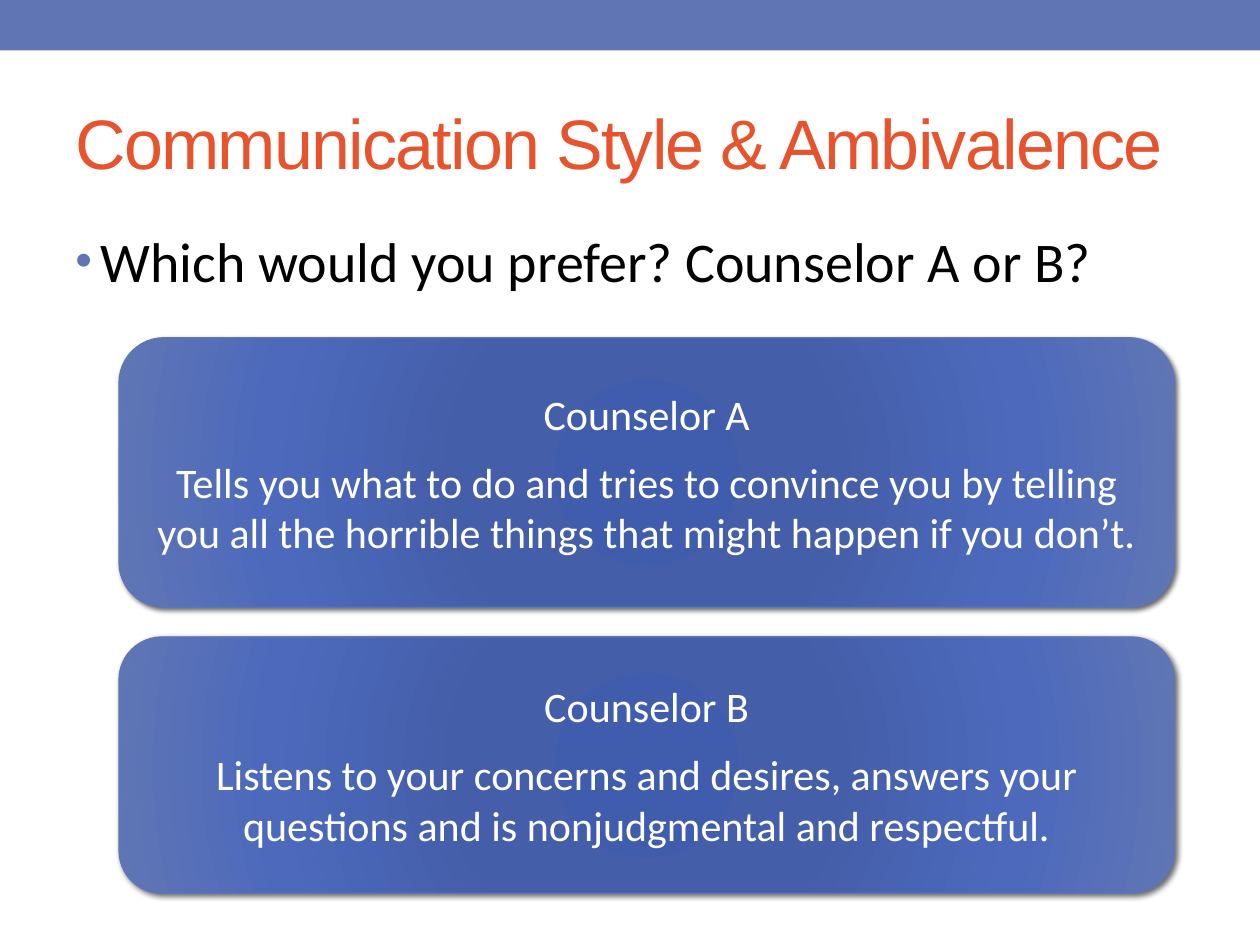
import pptx
import pptx.dml.color
import pptx.enum.shapes
import pptx.enum.text
import pptx.oxml
import pptx.oxml.ns
import pptx.util
from enum import Enum

Pt = pptx.util.Pt
RGBColor = pptx.dml.color.RGBColor
Align = pptx.enum.text.PP_ALIGN
Anchor = pptx.enum.text.MSO_ANCHOR
Shape = pptx.enum.shapes.MSO_SHAPE


class Theme(Enum):
    BLUE = "6076B4"
    ORANGE = "E6532C"
    BLACK = "000000"
    WHITE = "FFFFFF"
    TITLE_SIZE = 40
    QUESTION_SIZE = 32
    CARD_SIZE = 24


NAMESPACE = pptx.oxml.ns.nsdecls("a")
GRADIENT_STOPS = [(0, "405CAC"), (34, "445EA9"), (70, "4C69BC"), (100, "6076B4")]
GRADIENT = (
    f'<a:gradFill {NAMESPACE} rotWithShape="1"><a:gsLst>'
    + "".join(
        f'<a:gs pos="{position * 1000}"><a:srgbClr val="{color}"/></a:gs>'
        for position, color in GRADIENT_STOPS
    )
    + '</a:gsLst><a:path path="circle">'
    '<a:fillToRect l="100000" t="100000" r="100000" b="100000"/></a:path></a:gradFill>'
)
SHADOW = (
    f'<a:effectLst {NAMESPACE}><a:outerShdw blurRad="{Pt(3)}" dist="{Pt(2)}" dir="2700000" '
    'rotWithShape="0"><a:srgbClr val="000000"><a:alpha val="60000"/></a:srgbClr>'
    "</a:outerShdw></a:effectLst>"
)
BULLET = (
    f'<a:buClr {NAMESPACE}><a:srgbClr val="{Theme.BLUE.value}"/></a:buClr>',
    f'<a:buSzPct {NAMESPACE} val="85000"/>',
    f'<a:buFont {NAMESPACE} typeface="Arial"/>',
    f'<a:buChar {NAMESPACE} char="•"/>',
)


def write_text(shape, lines, *, size, color, font="Calibri", align=Align.LEFT,
               anchor=Anchor.TOP, before=0, after=0, tracking=None, indent=0):
    """Fill the shape with one paragraph per line; a nonzero indent adds a bullet."""
    frame = shape.text_frame
    frame.word_wrap = True
    frame.vertical_anchor = anchor
    for index, line in enumerate(lines):
        paragraph = frame.paragraphs[0] if index == 0 else frame.add_paragraph()
        paragraph.alignment = align
        paragraph.space_before = Pt(before)
        paragraph.space_after = Pt(after if index == 0 else 0)
        run = paragraph.add_run()
        run.text = line
        run.font.name = font
        run.font.size = Pt(size.value)
        run.font.color.rgb = RGBColor.from_string(color.value)
        if tracking:
            run.font._element.set("spc", str(tracking * 100))
        if indent:
            properties = paragraph._p.get_or_add_pPr()
            properties.set("marL", str(Pt(indent)))
            properties.set("indent", str(-Pt(indent)))
            for element in BULLET:
                properties.append(pptx.oxml.parse_xml(element))


presentation = pptx.Presentation()
presentation.slide_width = Pt(720)
presentation.slide_height = Pt(540)
slide = presentation.slides.add_slide(presentation.slide_layouts[6])

banner = slide.shapes.add_shape(Shape.RECTANGLE, 0, 0, Pt(720), Pt(28.8))
banner.shadow.inherit = False
banner.fill.solid()
banner.fill.fore_color.rgb = RGBColor.from_string(Theme.BLUE.value)
banner.line.fill.background()

title = slide.shapes.add_textbox(Pt(36), Pt(42), Pt(648), Pt(78))
write_text(title, ["Communication Style & Ambivalence"], size=Theme.TITLE_SIZE,
           color=Theme.ORANGE, font="Arial", anchor=Anchor.MIDDLE, tracking=-1)

question = slide.shapes.add_textbox(Pt(36), Pt(126), Pt(648), Pt(384))
write_text(question, ["Which would you prefer? Counselor A or B?"],
           size=Theme.QUESTION_SIZE, color=Theme.BLACK, before=2, after=10, indent=14.4)

counselors = [
    (193, 154, "Counselor A",
     "Tells you what to do and tries to convince you by telling you all the horrible "
     "things that might happen if you don’t."),
    (364, 146.5, "Counselor B",
     "Listens to your concerns and desires, answers your questions and is "
     "nonjudgmental and respectful."),
]
for top, height, name, style in counselors:
    card = slide.shapes.add_shape(Shape.ROUNDED_RECTANGLE, Pt(68), Pt(top), Pt(603), Pt(height))
    card.line.color.rgb = RGBColor.from_string(Theme.BLUE.value)
    card.line.width = Pt(0.75)
    outline = card.line._ln
    outline.addprevious(pptx.oxml.parse_xml(GRADIENT))
    outline.addnext(pptx.oxml.parse_xml(SHADOW))
    write_text(card, [name, style], size=Theme.CARD_SIZE, color=Theme.WHITE,
               align=Align.CENTER, anchor=Anchor.MIDDLE, after=10)

presentation.save("out.pptx")
